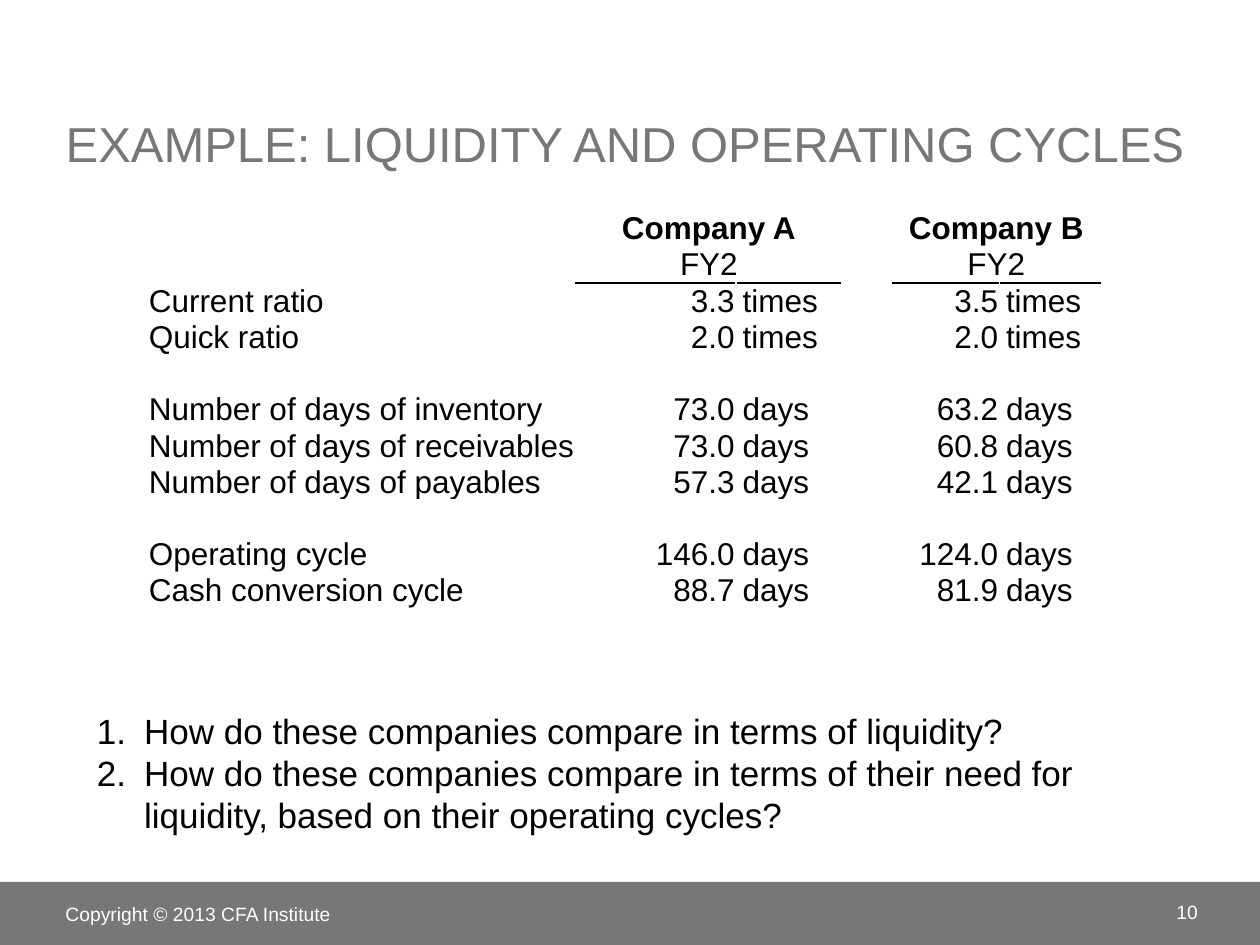
import pptx
import pptx.dml.color
import pptx.enum.shapes
import pptx.enum.text
import pptx.oxml
import pptx.oxml.ns
import pptx.util

Cm = pptx.util.Cm
Align = pptx.enum.text.PP_ALIGN
Anchor = pptx.enum.text.MSO_ANCHOR
COLORS = {"gray": "777777", "black": "000000", "white": "FFFFFF"}
COLUMN_WIDTHS = [8.64, 3.23, 2.13, 1.02, 2.16, 2.03]
ROW_HEIGHT = 0.73
COMPANIES = {1: "Company A", 4: "Company B"}
RATIOS = [
    ("Current ratio", "3.3", "3.5", "times"),
    ("Quick ratio", "2.0", "2.0", "times"),
    None,
    ("Number of days of inventory", "73.0", "63.2", "days"),
    ("Number of days of receivables", "73.0", "60.8", "days"),
    ("Number of days of payables", "57.3", "42.1", "days"),
    None,
    ("Operating cycle", "146.0", "124.0", "days"),
    ("Cash conversion cycle", "88.7", "81.9", "days"),
]
QUESTIONS = [
    "How do these companies compare in terms of liquidity?",
    "How do these companies compare in terms of their need for liquidity, "
    "based on their operating cycles?",
]


def rgb(name):
    """Return the palette colour of that name."""
    return pptx.dml.color.RGBColor.from_string(COLORS[name])


def write(paragraph, text, size=18, color="black", bold=False, align=Align.LEFT):
    """Write formatted text into a paragraph."""
    paragraph.alignment = align
    paragraph.space_before = pptx.util.Pt(0)
    run = paragraph.add_run()
    run.text = text
    run.font.name = "Arial"
    run.font.size = pptx.util.Pt(size)
    run.font.bold = bold
    run.font.color.rgb = rgb(color)


def place(shape, left, top, width, height, anchor):
    """Move a text shape into its box and return its text frame."""
    shape.left, shape.top, shape.width, shape.height = map(Cm, (left, top, width, height))
    frame = shape.text_frame
    frame.word_wrap = True
    frame.auto_size = pptx.enum.text.MSO_AUTO_SIZE.NONE
    frame.vertical_anchor = anchor
    return frame


def add_title(slide, left, top, width, height):
    """Fill the title placeholder."""
    frame = place(slide.shapes.title, left, top, width, height, Anchor.BOTTOM)
    write(frame.paragraphs[0], "EXAMPLE: LIQUIDITY AND OPERATING CYCLES", size=28, color="gray")


def add_border(cell, side):
    """Draw a thin black line on one side of a cell."""
    line = pptx.oxml.parse_xml(
        f'<a:{side} {pptx.oxml.ns.nsdecls("a")} w="12700"><a:solidFill>'
        f'<a:srgbClr val="{COLORS["black"]}"/></a:solidFill></a:{side}>'
    )
    cell._tc.get_or_add_tcPr().insert(0, line)


def fill_cell(cell, text, anchor=Anchor.BOTTOM, side_margin=0.03, **style):
    """Write one table cell with narrow margins."""
    cell.margin_left = cell.margin_right = Cm(side_margin)
    cell.vertical_anchor = anchor
    write(cell.text_frame.paragraphs[0], text, **style)


def add_ratio_table(slide, left, top):
    """Build the table of ratios under a heading for each company."""
    row_count = len(RATIOS) + 2
    table = slide.shapes.add_table(
        row_count, len(COLUMN_WIDTHS), Cm(left), Cm(top),
        Cm(sum(COLUMN_WIDTHS)), Cm(ROW_HEIGHT * row_count),
    ).table
    table.first_row = table.horz_banding = False
    for column, width in zip(table.columns, COLUMN_WIDTHS):
        column.width = Cm(width)
    for row in table.rows:
        row.height = Cm(ROW_HEIGHT)
    for cell in table.iter_cells():
        cell.fill.background()
        cell.margin_top = cell.margin_bottom = Cm(0)
        cell.text_frame.paragraphs[0]._p.get_or_add_endParaRPr().set("sz", "1000")

    for column, company in COMPANIES.items():
        for row, text in enumerate((company, "FY2")):
            cell = table.cell(row, column)
            cell.merge(table.cell(row, column + 1))
            fill_cell(cell, text, Anchor.MIDDLE, bold=row == 0, align=Align.CENTER)
        for offset in range(2):
            add_border(table.cell(1, column + offset), "lnB")
            add_border(table.cell(2, column + offset), "lnT")

    for row, ratio in enumerate(RATIOS, start=2):
        if ratio is None:
            continue
        label, *values, unit = ratio
        fill_cell(table.cell(row, 0), label)
        for column, value in zip(COMPANIES, values):
            fill_cell(table.cell(row, column), value, align=Align.RIGHT)
            fill_cell(table.cell(row, column + 1), unit, side_margin=0.13)


def add_questions(slide, left, top, width, height):
    """Fill the body placeholder with the numbered questions."""
    frame = place(slide.placeholders[1], left, top, width, height, Anchor.TOP)
    for index, question in enumerate(QUESTIONS):
        paragraph = frame.add_paragraph() if index else frame.paragraphs[0]
        properties = paragraph._p.get_or_add_pPr()
        properties.set("marL", str(Cm(0.95)))
        properties.set("indent", str(-Cm(0.95)))
        properties.append(pptx.oxml.parse_xml(
            f'<a:buAutoNum {pptx.oxml.ns.nsdecls("a")} type="arabicPeriod"/>'
        ))
        write(paragraph, question, size=20)


def add_footer(slide, left, top, width, height):
    """Draw the footer band with the copyright line and the slide number."""
    band = slide.shapes.add_shape(
        pptx.enum.shapes.MSO_SHAPE.RECTANGLE, *map(Cm, (left, top, width, height))
    )
    band.shadow.inherit = False
    band.fill.solid()
    band.fill.fore_color.rgb = rgb("gray")
    band.line.fill.background()
    for text, offset, drop, box_width, box_height, align in (
        ("Copyright © 2013 CFA Institute", 1.07, 0.08, 8.05, 1.12, Align.LEFT),
        ("10", 22.22, 0.1, 2.18, 1.02, Align.RIGHT),
    ):
        box = slide.shapes.add_textbox(0, 0, 0, 0)
        frame = place(box, left + offset, top + drop, box_width, box_height, Anchor.MIDDLE)
        write(frame.paragraphs[0], text, size=11, color="white", align=align)


def main():
    """Build and save the presentation."""
    presentation = pptx.Presentation()
    presentation.slide_width, presentation.slide_height = Cm(25.4), Cm(19.05)
    slide = presentation.slides.add_slide(presentation.slide_layouts[1])
    add_footer(slide, 0, 17.78, 25.4, 1.27)
    add_title(slide, 1.07, 0.43, 23.27, 3.18)
    add_ratio_table(slide, 2.97, 4.24)
    add_questions(slide, 1.7, 14.17, 22.02, 2.97)
    presentation.save("out.pptx")


if __name__ == "__main__":
    main()
